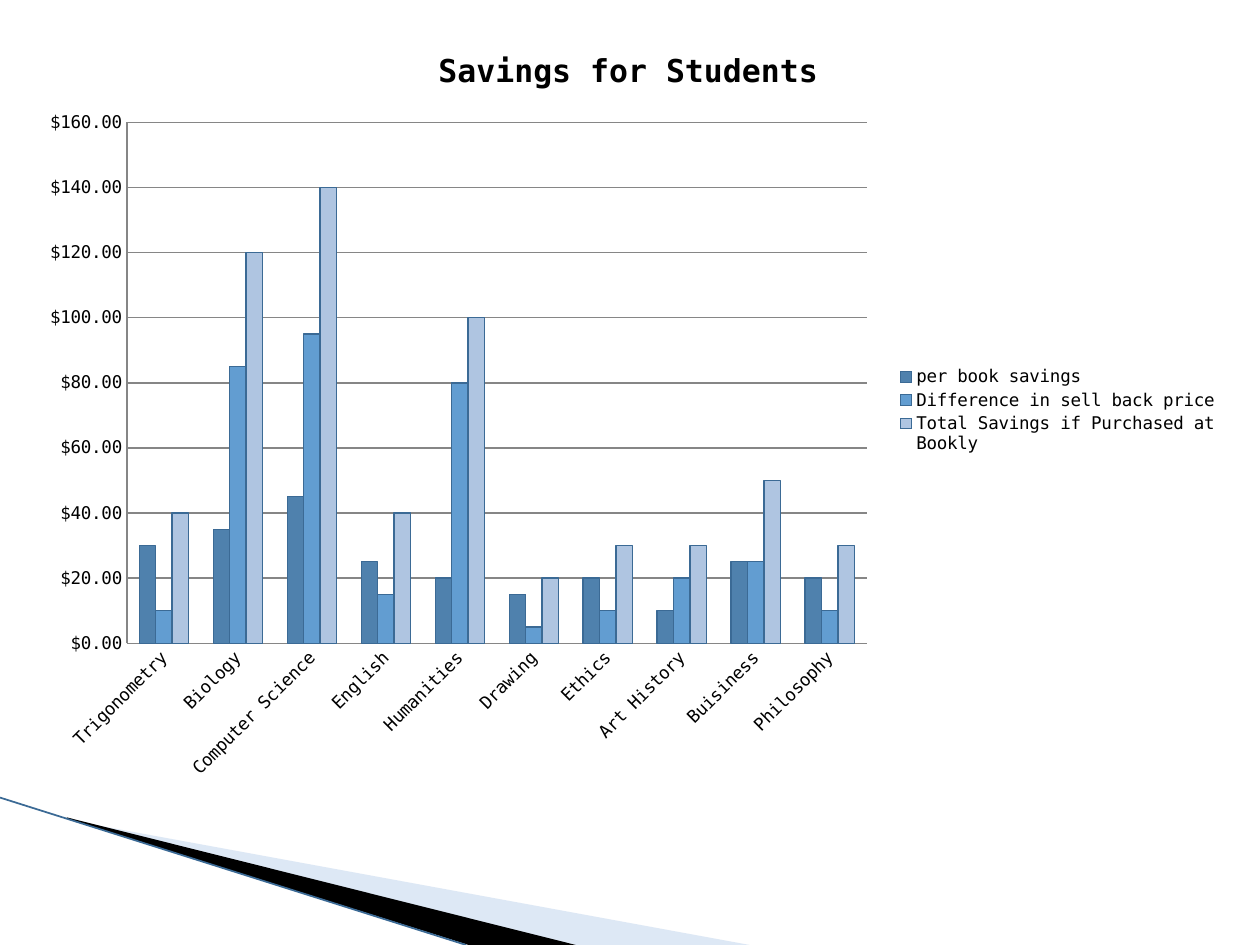
from dataclasses import dataclass

from lxml.etree import SubElement
from pptx import Presentation
from pptx.chart.data import CategoryChartData
from pptx.dml.color import RGBColor
from pptx.enum.chart import XL_CHART_TYPE, XL_LEGEND_POSITION, XL_TICK_MARK
from pptx.oxml.ns import qn
from pptx.util import Inches, Pt

WIDTH, HEIGHT = Inches(10), Inches(7.5)
FACE = "DejaVu Sans Mono"
EDGE = "3B6A95"
MONEY = '"$"#,##0.00'
SUBJECTS = ["Trigonometry", "Biology", "Computer Science", "English", "Humanities",
            "Drawing", "Ethics", "Art History", "Buisiness", "Philosophy"]


@dataclass
class Series:
    """One set of bars."""
    name: str
    values: list[float]
    color: str


@dataclass
class Wedge:
    """A filled corner shape, with points as percent of the slide."""
    points: list[tuple[float, float]]
    color: str
    alpha: int = 100


SAVINGS = [
    Series("per book savings", [30, 35, 45, 25, 20, 15, 20, 10, 25, 20], "4F81AD"),
    Series("Difference in sell back price", [10, 85, 95, 15, 80, 5, 10, 20, 25, 10], "629DD1"),
    Series("Total Savings if Purchased at Bookly",
           [40, 120, 140, 40, 100, 20, 30, 30, 50, 30], "AFC5E1"),
]
WEDGES = [
    Wedge([(5.5, 86.8), (59.5, 100), (45.6, 100), (5.5, 86.7)], "ABC6E6", 40),
    Wedge([(5.3, 86.5), (45.7, 100), (37.2, 100), (5.4, 86.7)], "000000"),
]


def paint(target, color: str) -> None:
    """Give a fill or line one solid colour."""
    target.fill.solid()
    target.fill.fore_color.rgb = RGBColor.from_string(color)


def style(font, size: float, bold: bool = False) -> None:
    """Set the face, size and weight of black text."""
    font.name, font.size, font.bold = FACE, Pt(size), bold
    font.color.rgb = RGBColor.from_string("000000")


def draw_wedge(slide, wedge: Wedge) -> None:
    """Draw one corner wedge without an outline."""
    points = [(round(x * WIDTH / 100), round(y * HEIGHT / 100)) for x, y in wedge.points]
    pen = slide.shapes.build_freeform(*points[0])
    pen.add_line_segments(points[1:], close=True)
    shape = pen.convert_to_shape()
    shape.shadow.inherit = False
    paint(shape, wedge.color)
    shape.line.fill.background()
    if wedge.alpha < 100:
        tint = shape.fill._xPr.find(".//" + qn("a:srgbClr"))
        SubElement(tint, qn("a:alpha")).set("val", str(wedge.alpha * 1000))


def draw_edge(slide) -> None:
    """Draw the thin line along the wedges."""
    line = slide.shapes.add_connector(1, 0, round(HEIGHT * 0.844), round(WIDTH * 0.37), HEIGHT)
    line.line.width = Pt(1)
    paint(line.line, EDGE)
    SubElement(line._element.spPr, qn("a:effectLst"))


def place(parent, index: int, box: dict[str, float], inner: bool = False) -> None:
    """Fix a chart part at shares of the chart's size."""
    for old in parent.findall(qn("c:layout")):
        parent.remove(old)
    layout = SubElement(parent, qn("c:layout"))
    parent.insert(index, layout)
    manual = SubElement(layout, qn("c:manualLayout"))
    rules = {"layoutTarget": "inner"} if inner else {}
    rules |= {"xMode": "edge", "yMode": "edge"} | box
    for tag, value in rules.items():
        SubElement(manual, qn("c:" + tag)).set("val", str(value))


def draw_chart(slide, rows: list[Series]) -> None:
    """Draw the clustered columns with title and legend."""
    data = CategoryChartData(number_format=MONEY)
    data.categories = SUBJECTS
    for row in rows:
        data.add_series(row.name, row.values)
    chart = slide.shapes.add_chart(XL_CHART_TYPE.COLUMN_CLUSTERED, Inches(0.25), Inches(0.17),
                                   Inches(9.47), Inches(6.17), data).chart
    style(chart.font, 10)
    chart.has_title = True
    chart.chart_title.text_frame.text = "Savings for Students"
    style(chart.chart_title.text_frame.paragraphs[0].runs[0].font, 18, True)

    plot = chart.plots[0]
    plot.gap_width, plot.overlap, plot.vary_by_categories = 150, 0, False
    for series, row in zip(plot.series, rows):
        paint(series.format, row.color)
        paint(series.format.line, EDGE)
        series.format.line.width = Pt(0.75)

    for axis in (chart.category_axis, chart.value_axis):
        axis.major_tick_mark = axis.minor_tick_mark = XL_TICK_MARK.NONE
        style(axis.tick_labels.font, 10)
        paint(axis.format.line, "868686")
    body = chart.category_axis._element.find(qn("c:txPr")).find(qn("a:bodyPr"))
    body.set("rot", "-2700000")
    scale = chart.value_axis
    scale.minimum_scale, scale.maximum_scale, scale.major_unit = 0, 160, 20
    scale.tick_labels.number_format = MONEY
    scale.tick_labels.number_format_is_linked = False
    scale.has_major_gridlines = True
    paint(scale.major_gridlines.format.line, "868686")

    chart.has_legend = True
    legend = chart.legend
    legend.position = XL_LEGEND_POSITION.RIGHT
    legend.include_in_layout = False
    style(legend.font, 10)
    place(legend._element, 1, {"x": 0.72, "y": 0.44, "w": 0.28, "h": 0.12})
    area = chart._chartSpace.find(".//" + qn("c:plotArea"))
    place(area, 0, {"x": 0.08, "y": 0.13, "w": 0.62, "h": 0.67}, True)


def main() -> None:
    """Build and save the slide."""
    deck = Presentation()
    deck.slide_width, deck.slide_height = WIDTH, HEIGHT
    slide = deck.slides.add_slide(deck.slide_layouts[6])
    for wedge in WEDGES:
        draw_wedge(slide, wedge)
    draw_edge(slide)
    draw_chart(slide, SAVINGS)
    deck.save("out.pptx")


if __name__ == "__main__":
    main()
